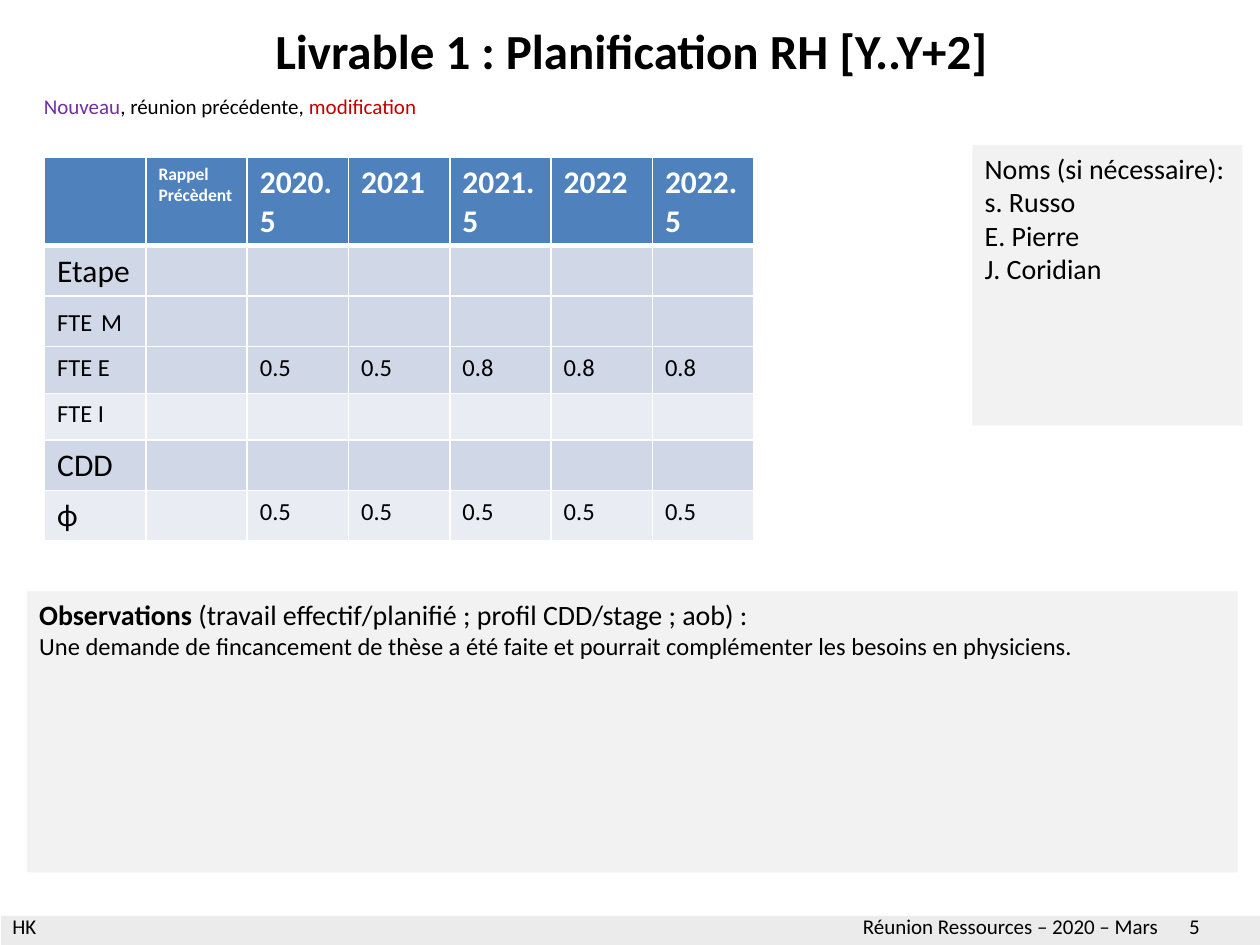
"""Build the staffing plan slide: title, table, names, observations and footer."""
from lxml.etree import SubElement
from pptx import Presentation
from pptx.dml.color import RGBColor
from pptx.enum.shapes import MSO_SHAPE as Shape
from pptx.enum.text import MSO_ANCHOR as Anchor, PP_ALIGN as Align
from pptx.oxml.ns import qn
from pptx.util import Pt

BLACK = RGBColor(0, 0, 0)
WHITE = RGBColor(255, 255, 255)
PURPLE = RGBColor(0x70, 0x30, 0xA0)
RED = RGBColor(0xC0, 0, 0)
HEADER_BLUE = RGBColor(0x4F, 0x81, 0xBD)
DARK_BAND = RGBColor(0xD0, 0xD8, 0xE7)
LIGHT_BAND = RGBColor(0xE9, 0xEC, 0xF3)
PANEL_GREY = RGBColor(0xF2, 0xF2, 0xF2)
BAR_GREY = RGBColor(0xD9, 0xD9, 0xD9)

HEADINGS = ["", "Rappel\nPrécèdent", "2020.5", "2021", "2021.5", "2022", "2022.5"]
NO_VALUES = [""] * 5
STAFFING = [
    ([("Etape", 18)], NO_VALUES, DARK_BAND),
    ([("FTE", 14), (" ", 18, BLACK, False, "Arial"), ("M", 14)], NO_VALUES, DARK_BAND),
    ([("FTE E", 14)], ["0.5", "0.5", "0.8", "0.8", "0.8"], DARK_BAND),
    ([("FTE I", 14)], NO_VALUES, LIGHT_BAND),
    ([("CDD", 18)], NO_VALUES, DARK_BAND),
    ([("ϕ", 18)], ["0.5"] * 5, LIGHT_BAND),
]


def add_run(paragraph, text, size, color=BLACK, bold=False, face="Calibri"):
    """Append one formatted run."""
    run = paragraph.add_run()
    run.text = text
    run.font.size = Pt(size)
    run.font.name = face
    run.font.bold = bold
    run.font.color.rgb = color


def write(frame, lines, align=Align.LEFT):
    """Fill a text frame with lines, each a list of runs."""
    for index, line in enumerate(lines):
        paragraph = frame.add_paragraph() if index else frame.paragraphs[0]
        paragraph.alignment = align
        for run in line:
            add_run(paragraph, *run)


def add_label(slide, left, top, width, runs):
    """Add a single-line text box."""
    label = slide.shapes.add_textbox(Pt(left), Pt(top), Pt(width), Pt(21.8))
    label.text_frame.word_wrap = False
    write(label.text_frame, [runs])


def add_panel(slide, left, top, width, height, color, lines=()):
    """Add a flat rectangle with text at its top left."""
    panel = slide.shapes.add_shape(
        Shape.RECTANGLE, Pt(left), Pt(top), Pt(width), Pt(height))
    panel.shadow.inherit = False
    panel.fill.solid()
    panel.fill.fore_color.rgb = color
    panel.line.fill.background()
    panel.text_frame.word_wrap = True
    panel.text_frame.vertical_anchor = Anchor.TOP
    write(panel.text_frame, lines)
    return panel


def set_borders(cell, top, bottom):
    """Draw white cell borders with the given top and bottom widths."""
    properties = cell._tc.get_or_add_tcPr()
    widths = {"a:lnL": 1, "a:lnR": 1, "a:lnT": top, "a:lnB": bottom}
    for index, (side, width) in enumerate(widths.items()):
        border = properties.makeelement(qn(side), {"w": str(Pt(width))})
        fill = SubElement(border, qn("a:solidFill"))
        SubElement(fill, qn("a:srgbClr"), val=str(WHITE))
        properties.insert(index, border)


def fill_cell(cell, lines, color, top=1, bottom=1):
    """Set the text, fill and borders of a cell."""
    cell.fill.solid()
    cell.fill.fore_color.rgb = color
    set_borders(cell, top, bottom)
    write(cell.text_frame, lines)
    if not cell.text_frame.text:
        end = cell.text_frame.paragraphs[0]._p.get_or_add_endParaRPr()
        end.set("sz", "1400")


def add_staffing_table(slide):
    """Add the table of staffing by half year."""
    graphic = slide.shapes.add_table(
        len(STAFFING) + 1, len(HEADINGS), Pt(25.5), Pt(90), Pt(405.4), Pt(223.2))
    table = graphic.table
    for column in table.columns:
        column.width = Pt(57.9)
    for index, row in enumerate(table.rows):
        row.height = Pt(26.7 if index else 43.2)
    graphic.height = Pt(223.2)
    for column, heading in enumerate(HEADINGS):
        size = 10 if column == 1 else 18
        lines = [[(part, size, WHITE, True)] for part in heading.split("\n") if part]
        fill_cell(table.cell(0, column), lines, HEADER_BLUE, bottom=3)
    for row, (label, values, band) in enumerate(STAFFING, 1):
        contents = [label, []] + [[(value, 14)] if value else [] for value in values]
        for column, runs in enumerate(contents):
            fill_cell(table.cell(row, column), [runs], band, top=3 if row == 1 else 1)


def add_title(slide):
    """Fill and place the title placeholder."""
    title = slide.shapes.title
    title.left, title.top, title.width, title.height = Pt(36.7), Pt(3.6), Pt(648), Pt(49.7)
    title.text_frame.word_wrap = True
    title.text_frame.vertical_anchor = Anchor.MIDDLE
    write(title.text_frame,
          [[("Livrable 1 : Planification RH [Y..Y+2]", 28, BLACK, True)]], Align.CENTER)


def add_footer(slide):
    """Add the translucent bar and its three labels."""
    bar = add_panel(slide, 0.7, 523.4, 719.3, 16.6, BAR_GREY)
    color = bar._element.spPr.find(qn("a:solidFill")).find(qn("a:srgbClr"))
    SubElement(color, qn("a:alpha"), val="50000")
    for left, width, text in [(486, 212.4, "Réunion Ressources – 2020 – Mars"),
                              (672.5, 47.5, "5"), (0, 88.6, "HK")]:
        add_label(slide, left, 518.4, width, [(text, 12)])


def main():
    """Build and save the slide."""
    deck = Presentation()
    deck.slide_width, deck.slide_height = Pt(720), Pt(540)
    slide = deck.slides.add_slide(deck.slide_layouts[5])
    add_footer(slide)
    add_staffing_table(slide)
    add_title(slide)
    names = ["Noms (si nécessaire):", "s. Russo", "E. Pierre", "J. Coridian"]
    add_panel(slide, 555.6, 82.8, 154.4, 160.5, PANEL_GREY, [[(name, 16)] for name in names])
    add_label(slide, 18, 49.7, 227.5, [
        ("Nouveau", 12, PURPLE), (", réunion précédente, ", 12), ("modification", 12, RED)])
    add_panel(slide, 15.3, 338, 691.9, 160.5, PANEL_GREY, [
        [("Observations", 16, BLACK, True),
         (" (travail effectif/planifié ; profil CDD/stage ; aob) :", 16)],
        [("Une demande de fincancement de thèse a été faite et pourrait "
          "complémenter les besoins en physiciens.", 14)]])
    deck.save("out.pptx")


if __name__ == "__main__":
    main()
